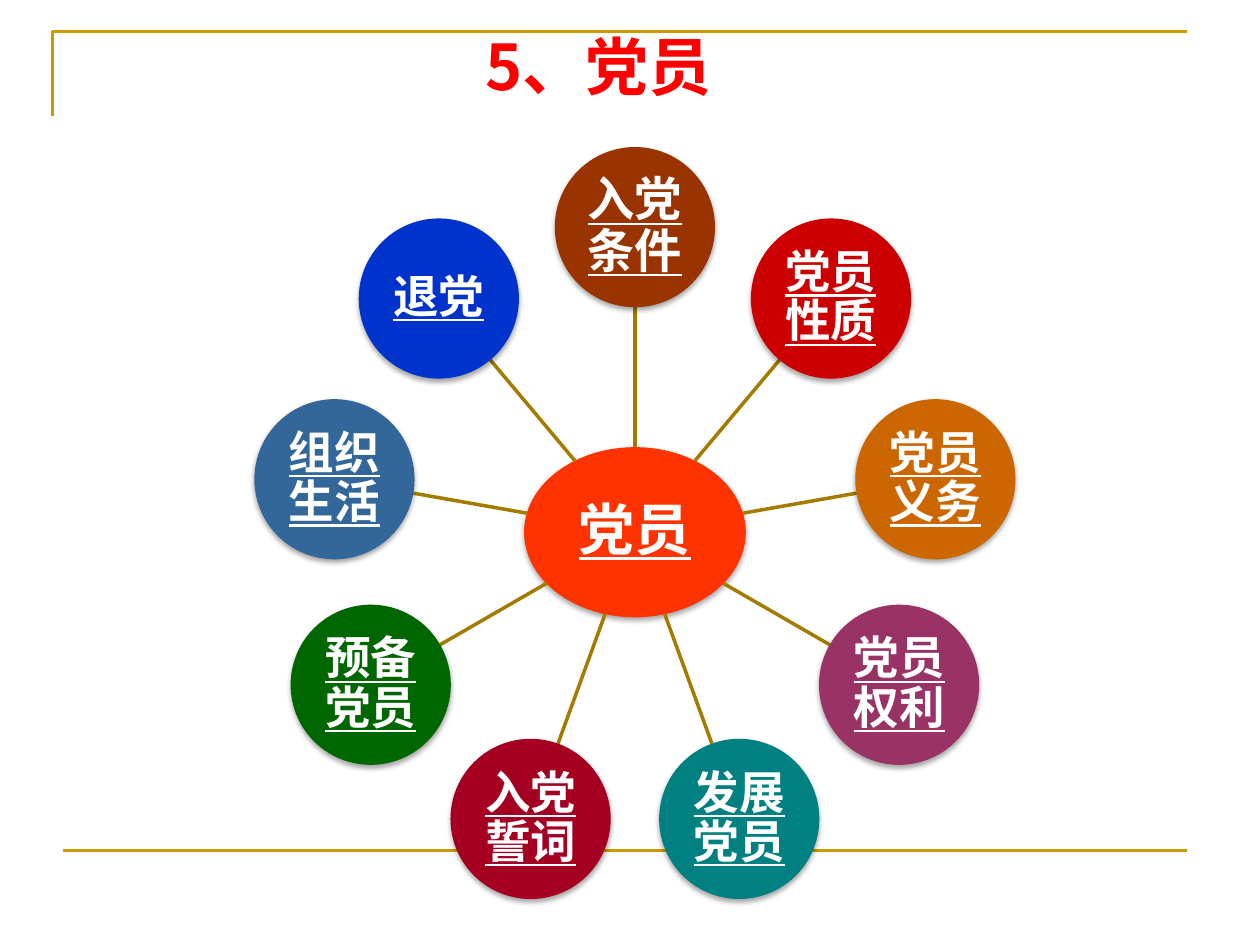
from dataclasses import dataclass
from math import cos, hypot, radians, sin

from lxml import etree
from pptx import Presentation
from pptx.dml.color import RGBColor
from pptx.enum.shapes import MSO_CONNECTOR, MSO_SHAPE
from pptx.enum.text import MSO_ANCHOR, PP_ALIGN
from pptx.oxml.ns import qn
from pptx.util import Cm, Pt

OVAL = MSO_SHAPE.OVAL
STRAIGHT = MSO_CONNECTOR.STRAIGHT
CENTER = PP_ALIGN.CENTER
TOP = MSO_ANCHOR.TOP
MIDDLE = MSO_ANCHOR.MIDDLE

FONT = "Noto Sans CJK SC"
WHITE = RGBColor(0xFF, 0xFF, 0xFF)
RED = RGBColor(0xFF, 0x00, 0x00)
GOLD = RGBColor(0xCC, 0x99, 0x00)
DARK_GOLD = RGBColor(0xA3, 0x7B, 0x00)
ORANGE_RED = RGBColor(0xFF, 0x33, 0x00)
BROWN = RGBColor(0x99, 0x33, 0x00)
SCARLET = RGBColor(0xCC, 0x00, 0x00)
ORANGE = RGBColor(0xCC, 0x66, 0x00)
PLUM = RGBColor(0x99, 0x33, 0x66)
TEAL = RGBColor(0x00, 0x80, 0x80)
CRIMSON = RGBColor(0xA5, 0x00, 0x21)
GREEN = RGBColor(0x00, 0x66, 0x00)
STEEL = RGBColor(0x33, 0x66, 0x99)
BLUE = RGBColor(0x00, 0x33, 0xCC)

CENTER_X, CENTER_Y = 12.8, 10.73
ORBIT = 6.15
HUB_W, HUB_H = 4.47, 3.43
TOPIC_D = 3.23
INSET = 0.05


@dataclass
class Topic:
    text: str
    color: RGBColor
    size: int = 26


HUB = Topic("党员", ORANGE_RED, 32)
TOPICS = [
    Topic("入党条件", BROWN, 27),
    Topic("党员性质", SCARLET),
    Topic("党员义务", ORANGE),
    Topic("党员权利", PLUM),
    Topic("发展党员", TEAL),
    Topic("入党誓词", CRIMSON),
    Topic("预备党员", GREEN),
    Topic("组织生活", STEEL),
    Topic("退党", BLUE),
]


def write_text(tf, text: str, size: int, color: RGBColor, underline: bool) -> None:
    p = tf.paragraphs[0]
    p.alignment = CENTER
    r = p.add_run()
    r.text = text
    formats = {"name": FONT, "size": Pt(size), "bold": True, "underline": underline}
    for name, value in formats.items():
        setattr(r.font, name, value)
    r.font.color.rgb = color
    etree.SubElement(r.font._element, qn("a:ea"), typeface=FONT)


def add_shadow(sp) -> None:
    sp.shadow.inherit = False
    effects = sp._element.spPr.find(qn("a:effectLst"))
    shadow = etree.SubElement(
        effects, qn("a:outerShdw"), blurRad=str(Pt(3.1)), dist=str(Pt(1.8)),
        dir="5400000", rotWithShape="0",
    )
    black = etree.SubElement(shadow, qn("a:srgbClr"), val="000000")
    etree.SubElement(black, qn("a:alpha"), val="35000")


def add_bubble(s, topic: Topic, x: float, y: float, w: float, h: float) -> None:
    sp = s.shapes.add_shape(OVAL, Cm(x - w / 2), Cm(y - h / 2), Cm(w), Cm(h))
    sp.fill.solid()
    sp.fill.fore_color.rgb = topic.color
    sp.line.fill.background()
    add_shadow(sp)
    tf = sp.text_frame
    formats = {"word_wrap": True, "vertical_anchor": MIDDLE}
    formats |= {f"margin_{side}": Cm(INSET) for side in ("left", "top", "right", "bottom")}
    for name, value in formats.items():
        setattr(tf, name, value)
    write_text(tf, topic.text, topic.size, WHITE, True)
    tf.paragraphs[0].line_spacing = 0.9


def add_line(s, x1: float, y1: float, x2: float, y2: float, color: RGBColor, width: float) -> None:
    line = s.shapes.add_connector(STRAIGHT, Cm(x1), Cm(y1), Cm(x2), Cm(y2))
    line.line.color.rgb = color
    line.line.width = Pt(width)
    etree.SubElement(line._element.spPr, qn("a:effectLst"))


def add_frame(s) -> None:
    builder = s.shapes.build_freeform(Cm(1.06), Cm(2.33))
    builder.add_line_segments([(Cm(1.06), Cm(0.64)), (Cm(23.92), Cm(0.64))], close=False)
    sp = builder.convert_to_shape()
    sp.fill.background()
    sp.line.color.rgb = GOLD
    sp.line.width = Pt(1.5)
    sp.shadow.inherit = False
    add_line(s, 1.27, 17.14, 23.93, 17.14, GOLD, 1.5)


def add_title(s) -> None:
    tf = s.shapes.add_textbox(Cm(5.5), Cm(0.43), Cm(13.13), Cm(2.4)).text_frame
    tf.word_wrap = True
    tf.vertical_anchor = TOP
    write_text(tf, "5、党员", 36, RED, False)


def add_wheel(s) -> None:
    add_bubble(s, HUB, CENTER_X, CENTER_Y, HUB_W, HUB_H)
    for i, topic in enumerate(TOPICS):
        angle = radians(i * 360 / len(TOPICS))
        dx, dy = sin(angle), -cos(angle)
        start = 1 / hypot(dx / (HUB_W / 2), dy / (HUB_H / 2))
        end = ORBIT - TOPIC_D / 2
        add_line(
            s, CENTER_X + start * dx, CENTER_Y + start * dy,
            CENTER_X + end * dx, CENTER_Y + end * dy, DARK_GOLD, 2,
        )
        add_bubble(s, topic, CENTER_X + ORBIT * dx, CENTER_Y + ORBIT * dy, TOPIC_D, TOPIC_D)


def main() -> None:
    prs = Presentation()
    prs.slide_width, prs.slide_height = Cm(25.4), Cm(19.05)
    s = prs.slides.add_slide(prs.slide_layouts[6])
    add_frame(s)
    add_title(s)
    add_wheel(s)
    prs.save("out.pptx")


if __name__ == "__main__":
    main()
